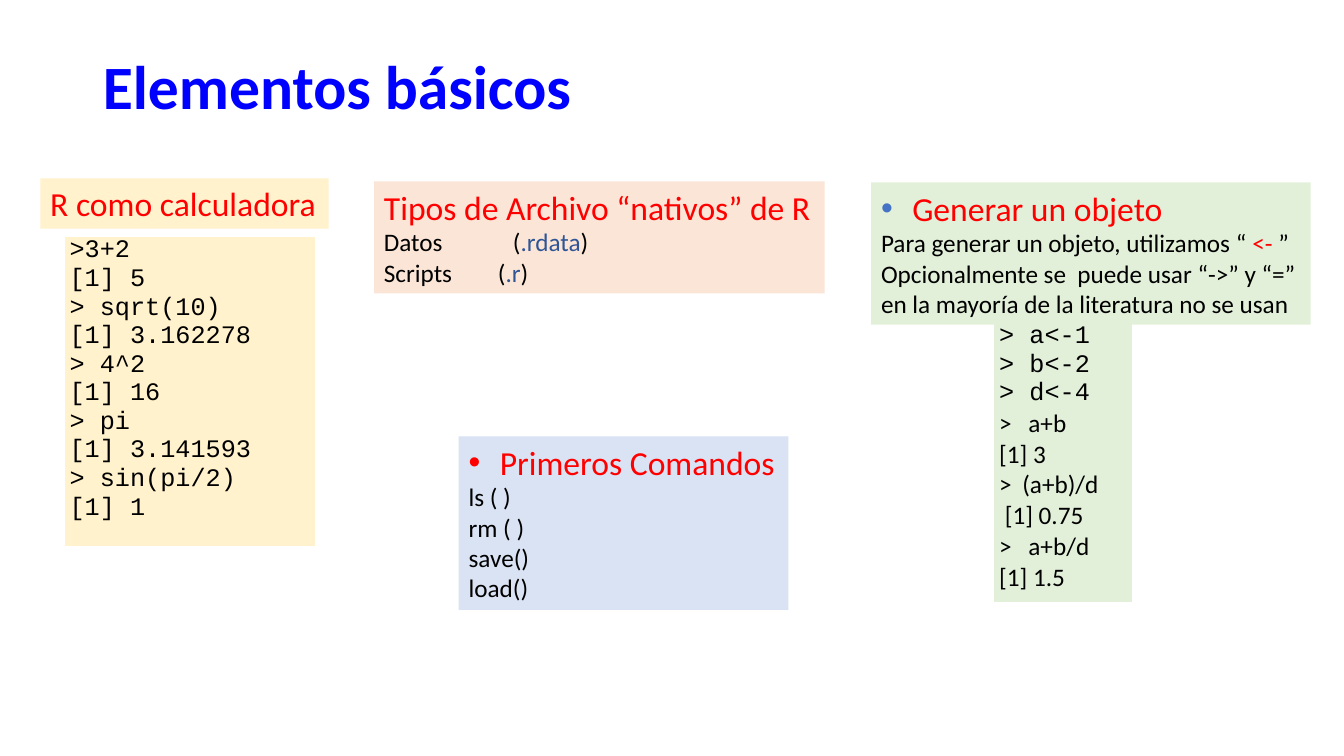
from dataclasses import dataclass

from lxml.etree import SubElement
from pptx import Presentation
from pptx.dml.color import RGBColor
from pptx.enum.text import MSO_ANCHOR, MSO_AUTO_SIZE, PP_ALIGN
from pptx.oxml.ns import qn
from pptx.util import Inches, Pt


@dataclass(frozen=True)
class Theme:
    sans: str = "Calibri"
    mono: str = "Courier New"
    title: int = 44
    head: int = 24
    body: int = 18
    blue: str = "0000FF"
    red: str = "FF0000"
    black: str = "000000"
    navy: str = "2F5597"
    dot: str = "4472C4"
    cream: str = "FFF2CC"
    peach: str = "FBE5D6"
    green: str = "E2F0D9"
    sky: str = "DAE3F3"
    bare: str = "{2D5ABB26-0587-4C30-8999-92F81FD0307C}"


def apply(item, style):
    for name, value in style.items():
        setattr(item, name, value)


class Board:
    def __init__(self, deck, theme):
        self.theme = theme
        self.slide = deck.slides.add_slide(deck.slide_layouts[5])

    def paint(self, item, color):
        item.fill.solid()
        item.fill.fore_color.rgb = RGBColor.from_string(color)

    def span(self, para, text, size, color, face=None, bold=False):
        run = para.add_run()
        run.text = text
        style = {"name": face or self.theme.sans, "size": Pt(size), "bold": bold}
        apply(run.font, style)
        run.font.color.rgb = RGBColor.from_string(color)

    def line(self, para, parts, face=None):
        if isinstance(parts, str):
            parts = [(parts, self.theme.black)]
        for text, color in parts:
            self.span(para, text, self.theme.body, color, face)

    def bullet(self, para, color):
        props = para._p.get_or_add_pPr()
        indent = {"marL": Inches(0.31), "indent": Inches(-0.31)}
        for name, value in indent.items():
            props.set(name, str(value))
        tint = SubElement(props, qn("a:buClr"))
        SubElement(tint, qn("a:srgbClr"), val=color)
        SubElement(props, qn("a:buFont"), typeface="Arial")
        SubElement(props, qn("a:buChar"), char="•")

    def tab(self, para, stop):
        tabs = SubElement(para._p.get_or_add_pPr(), qn("a:tabLst"))
        SubElement(tabs, qn("a:tab"), pos=str(Inches(stop)), algn="l")

    def title(self, text, area):
        shape = self.slide.shapes.title
        places = map(Inches, area)
        apply(shape, dict(zip(("left", "top", "width", "height"), places)))
        frame = shape.text_frame
        apply(frame, {"word_wrap": True, "vertical_anchor": MSO_ANCHOR.MIDDLE})
        para = frame.paragraphs[0]
        apply(para, {"alignment": PP_ALIGN.LEFT, "line_spacing": 0.9})
        self.span(para, text, self.theme.title, self.theme.blue, bold=True)

    def card(self, area, fill, head, lines=(), dot=None, stops=()):
        box = self.slide.shapes.add_textbox(*map(Inches, area))
        self.paint(box, fill)
        frame = box.text_frame
        apply(frame, {"word_wrap": False, "auto_size": MSO_AUTO_SIZE.SHAPE_TO_FIT_TEXT})
        para = frame.paragraphs[0]
        if dot:
            self.bullet(para, dot)
        self.span(para, head, self.theme.head, self.theme.red)
        paras = [frame.add_paragraph() for _ in lines]
        for para, parts in zip(paras, lines):
            self.line(para, parts)
        for para, stop in zip(paras, stops):
            self.tab(para, stop)

    def code(self, area, fill, mono, sans=()):
        frame = self.slide.shapes.add_table(1, 1, *map(Inches, area))
        for style in frame.element.iter(qn("a:tableStyleId")):
            style.text = self.theme.bare
        apply(frame.table, {"first_row": False, "horz_banding": False})
        cell = frame.table.cell(0, 0)
        self.paint(cell, fill)
        apply(cell, {"margin_left": Inches(0.05), "margin_top": 0,
                     "margin_right": 0, "margin_bottom": Inches(0.07)})
        text = cell.text_frame
        rows = [(row, self.theme.mono, None) for row in mono]
        rows += [(row, self.theme.sans, stop) for row, stop in sans]
        for index, (row, face, stop) in enumerate(rows):
            para = text.add_paragraph() if index else text.paragraphs[0]
            self.line(para, row, face)
            if stop:
                self.tab(para, stop)


def main():
    deck = Presentation()
    apply(deck, {"slide_width": Inches(13.33), "slide_height": Inches(7.5)})
    theme = Theme()
    board = Board(deck, theme)
    black, red, navy = theme.black, theme.red, theme.navy

    board.card((8.64, 1.81, 4.36, 1.41), theme.green, "Generar un objeto", [
        [("Para generar un objeto, utilizamos “ ", black), ("<- ", red), ("”", black)],
        "Opcionalmente se  puede usar “->” y “=”",
        "en la mayoría de la literatura no se usan",
    ], dot=theme.dot)
    board.code((9.86, 3.2, 1.37, 2.77), theme.green,
               ["> a<-1", "> b<-2", "> d<-4"],
               [(">\ta+b", 0.29), ("[1] 3", None), (">\t(a+b)/d", 0.23),
                (" [1] 0.75", None), (">\ta+b/d", 0.29), ("[1] 1.5", None)])

    board.card((4.55, 4.33, 3.27, 1.72), theme.sky, "Primeros Comandos",
               ["ls ( )", "rm ( )", "save()", "load()"], dot=red)

    board.code((0.64, 2.35, 2.48, 3.07), theme.cream, [
        ">3+2", "[1] 5", "> sqrt(10)", "[1] 3.162278", "> 4^2",
        "[1] 16", "> pi", "[1] 3.141593", "> sin(pi/2)", "[1] 1",
    ])
    board.card((0.4, 1.77, 2.86, 0.5), theme.cream, "R como calculadora")

    files = [("Datos", ".rdata"), ("Scripts", ".r")]
    board.card((3.71, 1.8, 4.47, 1.11), theme.peach, "Tipos de Archivo “nativos” de R",
               [[(f"{kind}\t(", black), (end, navy), (")", black)] for kind, end in files],
               stops=(1.28, 1.13))
    board.title("Elementos básicos", (0.92, 0.34, 11.5, 1.1))
    deck.save("out.pptx")


if __name__ == "__main__":
    main()
